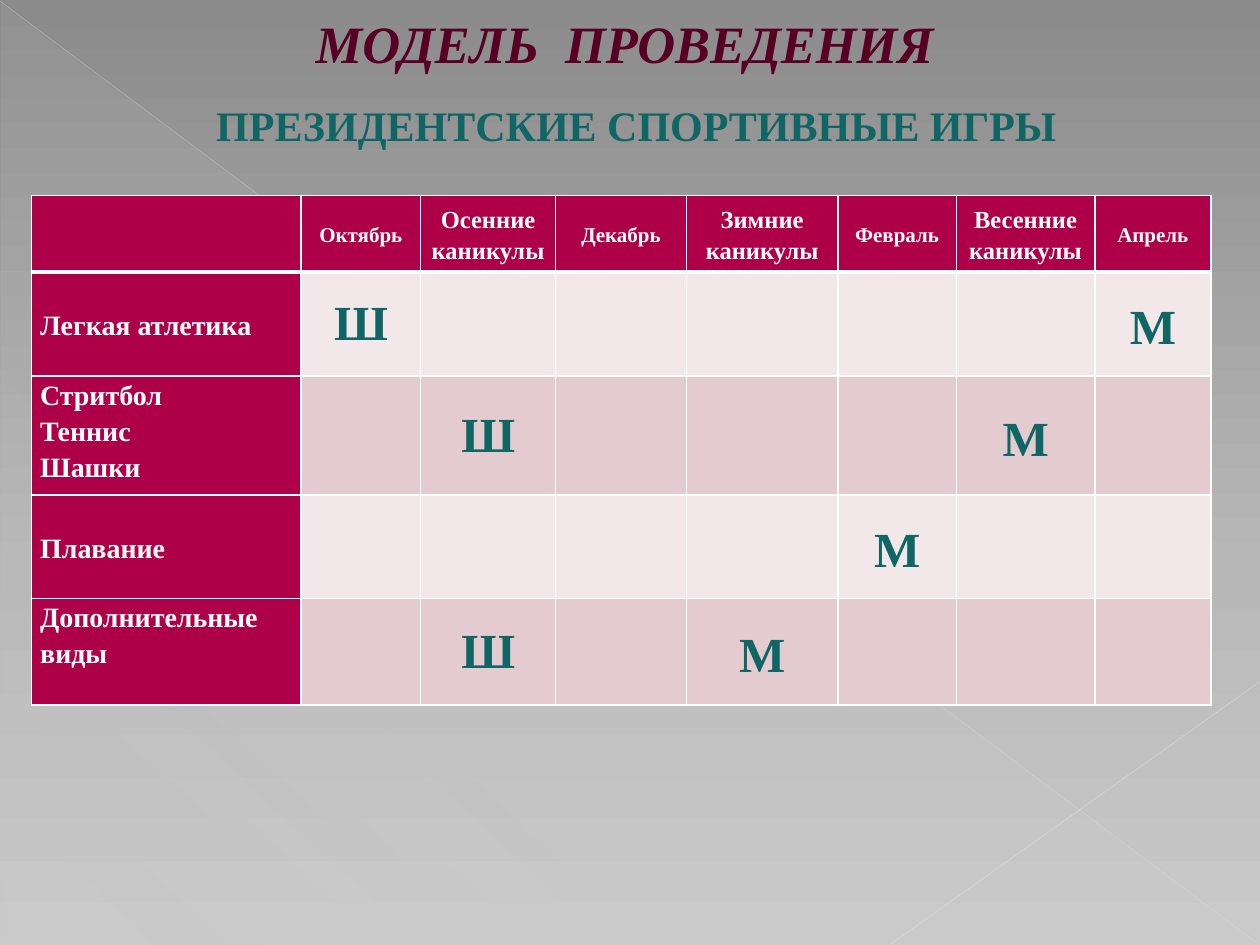
from dataclasses import dataclass

import lxml.etree
import pptx
import pptx.dml.color
import pptx.enum.shapes
import pptx.enum.text
import pptx.oxml.ns
import pptx.util

Cm = pptx.util.Cm
qn = pptx.oxml.ns.qn
ALIGN = pptx.enum.text.PP_ALIGN
ANCHOR = pptx.enum.text.MSO_ANCHOR
AUTO = pptx.enum.text.MSO_AUTO_SIZE


@dataclass(frozen=True)
class Theme:
    font: str = "Times New Roman"
    title: str = "570024"
    title_edge: str = "B16484"
    accent: str = "106664"
    head: str = "AE0049"
    white: str = "FFFFFF"
    bands: tuple = ("F2E7E9", "E3CBCF")
    title_pt: int = 30
    subtitle_pt: int = 24
    mark_pt: int = 28
    label_pt: int = 16
    holiday_pt: int = 14
    month_pt: int = 12


@dataclass(frozen=True)
class Period:
    name: str
    width: float
    size: int


@dataclass(frozen=True)
class Sport:
    label: str
    height: float
    marks: dict
    anchor: object = ANCHOR.TOP


@dataclass(frozen=True)
class Ray:
    start: tuple
    end: tuple
    color: str
    width: float
    opacity: int


T = Theme()
PERIODS = [
    Period("Октябрь", 2.41, T.month_pt),
    Period("Осенние каникулы", 2.72, T.holiday_pt),
    Period("Декабрь", 2.64, T.month_pt),
    Period("Зимние каникулы", 3.05, T.holiday_pt),
    Period("Февраль", 2.39, T.month_pt),
    Period("Весенние каникулы", 2.79, T.holiday_pt),
    Period("Апрель", 2.34, T.month_pt),
]
SPORTS = [
    Sport("Легкая атлетика", 2.1, {1: "Ш", 7: "М"}, ANCHOR.MIDDLE),
    Sport("Стритбол\nТеннис\nШашки", 2.4, {2: "Ш", 6: "М"}),
    Sport("Плавание", 2.08, {5: "М"}, ANCHOR.MIDDLE),
    Sport("Дополнительные виды", 2.15, {2: "Ш", 4: "М"}),
]
RAYS = [
    Ray((0, 0.02), (25.37, 19.03), "DFDFDF", 0.39, 35),
    Ray((25.4, 13.74), (17.96, 19.03), "E2E2E2", 0.47, 45),
]
LABEL_WIDTH, HEAD_HEIGHT = 5.44, 1.54


def rgb(color: str):
    return pptx.dml.color.RGBColor.from_string(color)


def add_color(parent, color: str, opacity: int = 100) -> None:
    clr = lxml.etree.SubElement(parent, qn("a:srgbClr"), val=color)
    if opacity < 100:
        lxml.etree.SubElement(clr, qn("a:alpha"), val=str(opacity * 1000))


def set_gradient(fill, element, stops: list, angle: int) -> None:
    """Fill with (position, colour, opacity) stops; element holds the fill, angle is clockwise."""
    fill.gradient()
    fill.gradient_angle = 360 - angle
    stop_list = element.find(".//" + qn("a:gsLst"))
    for old in list(stop_list):
        stop_list.remove(old)
    for position, color, opacity in stops:
        stop = lxml.etree.SubElement(stop_list, qn("a:gs"), pos=str(position * 1000))
        add_color(stop, color, opacity)


def make_line(tag: str, color: str, width: float):
    ln = lxml.etree.Element(qn(tag), w=str(pptx.util.Pt(width)))
    add_color(lxml.etree.SubElement(ln, qn("a:solidFill")), color)
    return ln


def write_text(tf, text: str, *, size: int, color: str, italic: bool = False,
               align=ALIGN.LEFT, spacing: float = 1.15) -> None:
    """Write each line of text as a bold paragraph."""
    for i, line in enumerate(text.split("\n")):
        p = tf.add_paragraph() if i else tf.paragraphs[0]
        p.alignment, p.line_spacing = align, spacing
        r = p.add_run()
        r.text = line
        r.font.name, r.font.size = T.font, pptx.util.Pt(size)
        r.font.bold, r.font.italic = True, italic
        r.font.color.rgb = rgb(color)


def draw_ray(s, ray: Ray) -> None:
    ends = [Cm(v) for v in ray.start + ray.end]
    sp = s.shapes.add_connector(pptx.enum.shapes.MSO_CONNECTOR.STRAIGHT, *ends)
    sp.line.color.rgb = rgb(ray.color)
    sp.line.width = pptx.util.Pt(ray.width)
    clr = sp.element.spPr.find(".//" + qn("a:srgbClr"))
    lxml.etree.SubElement(clr, qn("a:alpha"), val=str(ray.opacity * 1000))
    lxml.etree.SubElement(sp.element.spPr, qn("a:effectLst"))


def draw_backdrop(s) -> None:
    set_gradient(s.background.fill, s.element,
                 [(0, "8B8B8B", 100), (60, "B8B8B8", 100), (100, "CACACA", 100)], 90)
    sp = s.shapes.add_shape(pptx.enum.shapes.MSO_SHAPE.RIGHT_TRIANGLE,
                            Cm(0.03), Cm(0.05), Cm(25.37), Cm(19))
    sp.shadow.inherit = False
    sp.line.fill.background()
    set_gradient(sp.fill, sp.element,
                 [(0, "D2D2D2", 10), (70, "D2D2D2", 8), (100, "D2D2D2", 1)], 133)
    for ray in RAYS:
        draw_ray(s, ray)


def draw_headings(s) -> None:
    title = s.shapes.title
    s.shapes.element.append(title.element)  # in front of the backdrop
    title.left, title.top, title.width, title.height = Cm(1.17), Cm(0.36), Cm(22.86), Cm(1)
    tf = title.text_frame
    tf.auto_size, tf.vertical_anchor = AUTO.NONE, ANCHOR.MIDDLE
    write_text(tf, "МОДЕЛЬ  ПРОВЕДЕНИЯ", size=T.title_pt, color=T.title,
               italic=True, align=ALIGN.CENTER, spacing=1.0)
    tf.paragraphs[0].runs[0].font.fill.solid()
    tf.paragraphs[0].runs[0].font.color.rgb = rgb(T.title)
    r_pr = title.element.find(".//" + qn("a:rPr"))
    r_pr.insert(0, make_line("a:ln", T.title_edge, 0.5))

    tf = s.shapes.add_textbox(Cm(4.11), Cm(1.73), Cm(17.6), Cm(1.35)).text_frame
    tf.word_wrap, tf.auto_size = False, AUTO.SHAPE_TO_FIT_TEXT
    write_text(tf, "ПРЕЗИДЕНТСКИЕ СПОРТИВНЫЕ ИГРЫ", size=T.subtitle_pt, color=T.accent)


def style_cell(cell, color: str, row: int, anchor=ANCHOR.MIDDLE) -> None:
    """Set fill, insets and white borders, thick between the header and the body."""
    cell.fill.solid()
    cell.fill.fore_color.rgb = rgb(color)
    cell.vertical_anchor = anchor
    cell.margin_left = cell.margin_right = Cm(0.18)
    cell.margin_top = cell.margin_bottom = 0
    widths = {"a:lnL": 1, "a:lnR": 1, "a:lnT": 3 if row == 1 else 1,
              "a:lnB": 3 if row == 0 else 1}
    tc_pr = cell._tc.get_or_add_tcPr()
    for i, (tag, width) in enumerate(widths.items()):
        tc_pr.insert(i, make_line(tag, T.white, width))


def draw_schedule(s) -> None:
    widths = [LABEL_WIDTH] + [period.width for period in PERIODS]
    heights = [HEAD_HEIGHT] + [sport.height for sport in SPORTS]
    table = s.shapes.add_table(len(heights), len(widths), Cm(0.63), Cm(3.94),
                               Cm(sum(widths)), Cm(sum(heights))).table
    table.horz_banding = False
    for column, width in zip(table.columns, widths):
        column.width = Cm(width)
    for row, height in zip(table.rows, heights):
        row.height = Cm(height)

    style_cell(table.cell(0, 0), T.head, 0)
    for col, period in enumerate(PERIODS, 1):
        cell = table.cell(0, col)
        style_cell(cell, T.head, 0)
        write_text(cell.text_frame, period.name, size=period.size, color=T.white,
                   align=ALIGN.CENTER)
    for row, sport in enumerate(SPORTS, 1):
        label = table.cell(row, 0)
        style_cell(label, T.head, row, sport.anchor)
        write_text(label.text_frame, sport.label, size=T.label_pt, color=T.white)
        for col in range(1, len(widths)):
            cell = table.cell(row, col)
            style_cell(cell, T.bands[(row - 1) % 2], row)
            if mark := sport.marks.get(col):
                write_text(cell.text_frame, mark, size=T.mark_pt, color=T.accent,
                           align=ALIGN.CENTER, spacing=1.0 if mark == "Ш" else 1.15)


def main() -> None:
    prs = pptx.Presentation()
    prs.slide_width, prs.slide_height = Cm(25.4), Cm(19.05)
    s = prs.slides.add_slide(prs.slide_layouts[5])
    draw_backdrop(s)
    draw_headings(s)
    draw_schedule(s)
    prs.save("out.pptx")


if __name__ == "__main__":
    main()
